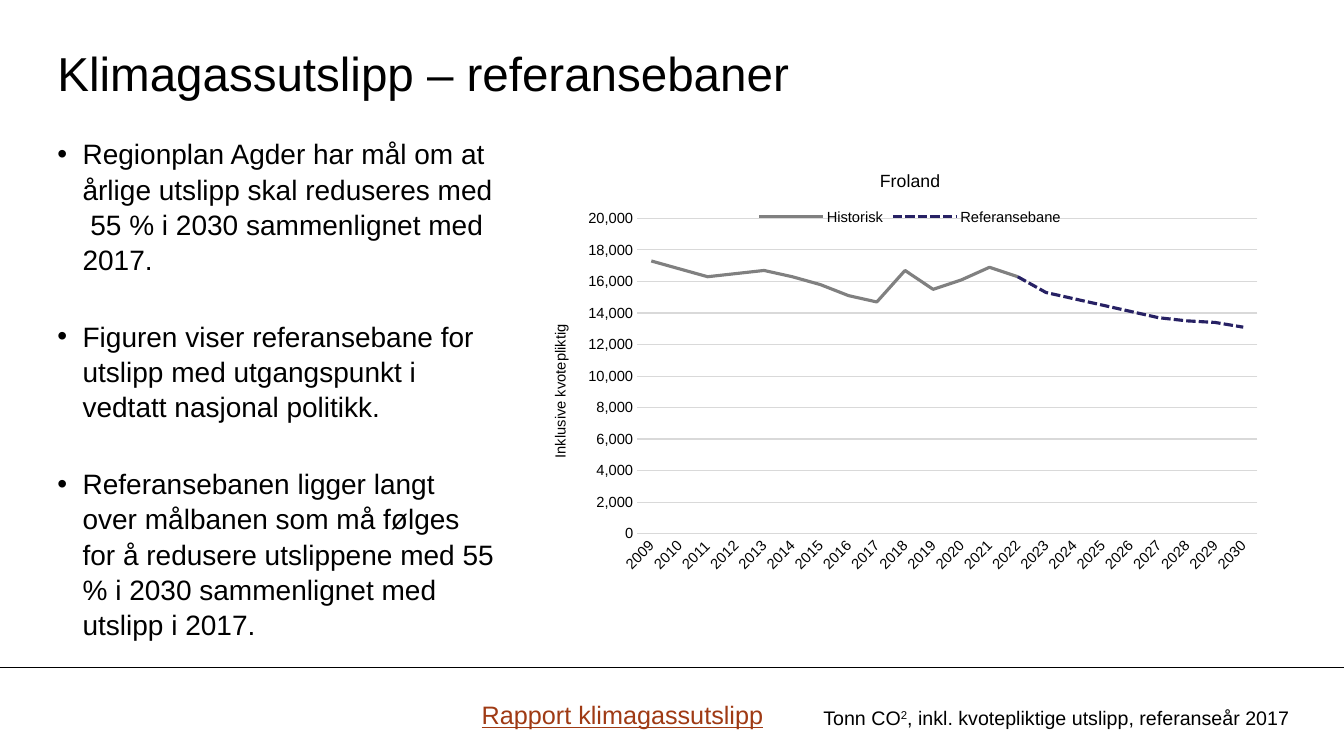
from lxml import etree
from pptx import Presentation
from pptx.chart.data import CategoryChartData
from pptx.dml.color import RGBColor
from pptx.enum import chart as charts, dml, shapes, text
from pptx.oxml import parse_xml
from pptx.oxml.ns import nsdecls, qn
from pptx.util import Pt

BLACK = RGBColor(0x00, 0x00, 0x00)
GRID = RGBColor(0xD9, 0xD9, 0xD9)
HISTORIC = RGBColor(0x80, 0x80, 0x80)
REFERENCE = RGBColor(0x27, 0x21, 0x64)
LINK = RGBColor(0x9F, 0x3A, 0x14)


def style(font, size, color=BLACK):
    font.name = "Arial"
    font.size = Pt(size)
    font.bold = False
    font.color.rgb = color


def add_box(left, top, width, height, inset=True):
    """Add a wrapping text box and return its text frame."""
    box = page.shapes.add_textbox(Pt(left), Pt(top), Pt(width), Pt(height))
    frame = box.text_frame
    frame.word_wrap = True
    if not inset:
        frame.margin_left = frame.margin_right = 0
        frame.margin_top = frame.margin_bottom = 0
    return frame


deck = Presentation()
deck.slide_width, deck.slide_height = Pt(960), Pt(540)
page = deck.slides.add_slide(deck.slide_layouts[6])

# Footer rule
rule = page.shapes.add_connector(
    shapes.MSO_CONNECTOR.STRAIGHT, Pt(0), Pt(476.6), Pt(960), Pt(476.6))
rule.line.color.rgb = BLACK
rule.line.width = Pt(0.75)
etree.SubElement(rule._element.spPr, qn("a:effectLst"))

# Title
title = add_box(41, 24.5, 799, 54, inset=False)
title.vertical_anchor = text.MSO_ANCHOR.MIDDLE
title.text = "Klimagassutslipp – referansebaner"
style(title.paragraphs[0].font, 34)

# Bullets
points = [
    "Regionplan Agder har mål om at årlige utslipp skal reduseres med  55 % i 2030 "
    "sammenlignet med 2017.",
    "Figuren viser referansebane for utslipp med utgangspunkt i vedtatt nasjonal politikk.",
    "Referansebanen ligger langt over målbanen som må følges for å redusere utslippene "
    "med 55 % i 2030 sammenlignet med utslipp i 2017.",
]
body = add_box(41, 96.5, 314, 367, inset=False)
for index, point in enumerate(points):
    para = body.paragraphs[0] if index == 0 else body.add_paragraph()
    para.text = point
    para.line_spacing = 1.05
    if index:
        para.space_before = Pt(29.6)
    properties = para._p.get_or_add_pPr()
    properties.set("marL", str(Pt(18)))
    properties.set("indent", str(-Pt(18)))
    etree.SubElement(properties, qn("a:buFont"), typeface="Arial")
    etree.SubElement(properties, qn("a:buChar"), char="•")
    style(para.font, 20)

# Emission chart
history = [17300, 16800, 16300, 16500, 16700, 16300, 15800,
           15100, 14700, 16700, 15500, 16100, 16900, 16300]
reference = [16300, 15300, 14900, 14500, 14100, 13700, 13500, 13400, 13100]
years = range(2009, 2031)
data = CategoryChartData(number_format="#,##0")
data.categories = [str(year) for year in years]
data.add_series("Historisk", history + [None] * (len(years) - len(history)))
data.add_series("Referansebane", [None] * (len(years) - len(reference)) + reference)
chart = page.shapes.add_chart(
    charts.XL_CHART_TYPE.LINE, Pt(381.6), Pt(108.7), Pt(537), Pt(322.5), data).chart
style(chart.font, 10.5)

chart.has_title = True
chart.chart_title.text_frame.text = "Froland"
style(chart.chart_title.text_frame.paragraphs[0].font, 12.6)
chart.has_legend = True
chart.legend.position = charts.XL_LEGEND_POSITION.TOP
chart.legend.include_in_layout = False
style(chart.legend.font, 10.5)

for series, color in zip(chart.plots[0].series, (HISTORIC, REFERENCE)):
    series.smooth = False
    series.marker.style = charts.XL_MARKER_STYLE.NONE
    series.format.line.color.rgb = color
    series.format.line.width = Pt(2.25)
series.format.line.dash_style = dml.MSO_LINE.SQUARE_DOT

year_axis, value_axis = chart.category_axis, chart.value_axis
for axis in (year_axis, value_axis):
    axis.major_tick_mark = axis.minor_tick_mark = charts.XL_TICK_MARK.NONE
    style(axis.tick_labels.font, 10.5)
year_axis.format.line.color.rgb = GRID
year_axis.format.line.width = Pt(0.75)
year_axis._element.find(qn("c:txPr")).find(qn("a:bodyPr")).set("rot", "-2700000")
value_axis.minimum_scale, value_axis.maximum_scale = 0, 20000
value_axis.major_unit = 2000
value_axis.tick_labels.number_format = "#,##0"
value_axis.tick_labels.number_format_is_linked = False
value_axis.format.line.fill.background()
value_axis.major_gridlines.format.line.color.rgb = GRID
value_axis.major_gridlines.format.line.width = Pt(0.75)
axis_title = value_axis.axis_title.text_frame
axis_title.text = "Inklusive kvotepliktig"
axis_title._txBody.find(qn("a:bodyPr")).set("rot", "-5400000")
style(axis_title.paragraphs[0].font, 10.5)

plot_area = chart._chartSpace.chart.plotArea
for old_layout in plot_area.findall(qn("c:layout")):
    plot_area.remove(old_layout)
plot_area.insert(0, parse_xml(
    f'<c:layout {nsdecls("c")}><c:manualLayout><c:layoutTarget val="inner"/>'
    '<c:xMode val="edge"/><c:yMode val="edge"/><c:x val="0.137"/><c:y val="0.147"/>'
    '<c:w val="0.825"/><c:h val="0.698"/></c:manualLayout></c:layout>'))

# Footer texts
unit_note = add_box(581, 500.4, 366.5, 24.2).paragraphs[0]
for part, baseline in (("Tonn CO", 0), ("2", 30000),
                       (", inkl. kvotepliktige utslipp, referanseår 2017", 0)):
    span = unit_note.add_run()
    span.text = part
    if baseline:
        span.font._element.set("baseline", str(baseline))
style(unit_note.font, 14)

report = add_box(337, 496.1, 227.5, 29).paragraphs[0]
report.text = "Rapport klimagassutslipp"
style(report.font, 18, LINK)
report.font.underline = True

deck.save("out.pptx")
